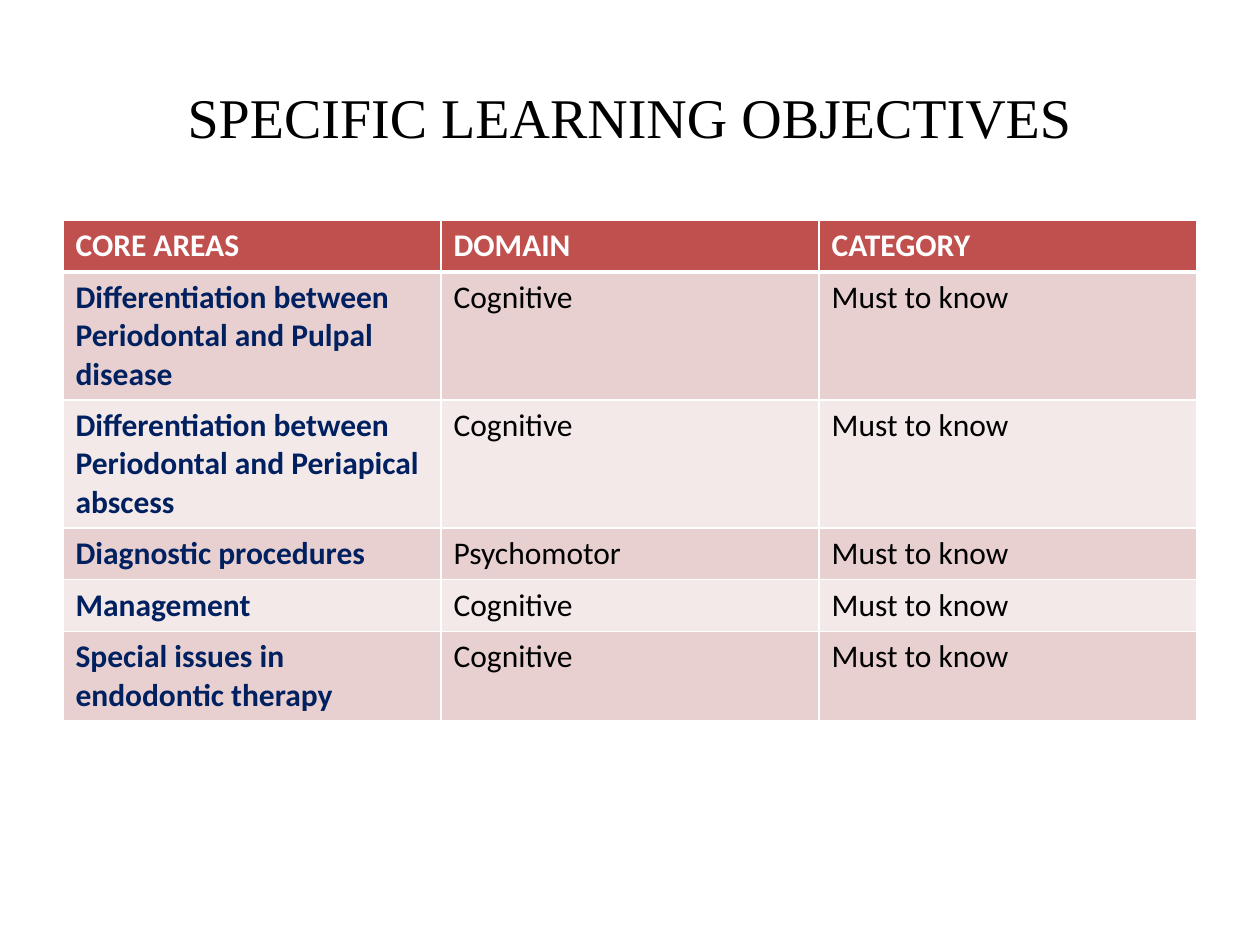
import pptx
import pptx.dml.color
import pptx.enum.text
import pptx.oxml
import pptx.oxml.ns
import pptx.util
from pptx.util import Inches

ROWS = [
    ("CORE AREAS", "DOMAIN", "CATEGORY"),
    ("Differentiation between Periodontal and Pulpal disease", "Cognitive", "Must to know"),
    ("Differentiation between Periodontal and Periapical abscess", "Cognitive", "Must to know"),
    ("Diagnostic procedures", "Psychomotor", "Must to know"),
    ("Management", "Cognitive", "Must to know"),
    ("Special issues in endodontic therapy", "Cognitive", "Must to know"),
]


def write(frame, text, font="Calibri", size=18, color="000000", bold=False, align=None):
    para = frame.paragraphs[0]
    para.alignment = align
    span = para.add_run()
    span.text = text
    span.font.name = font
    span.font.size = pptx.util.Pt(size)
    span.font.bold = bold
    span.font.color.rgb = pptx.dml.color.RGBColor.from_string(color)


def paint_cell(cell, fill, bottom):
    """Give the cell white borders, the bottom one in its own width, and a fill."""
    properties = cell._tc.get_or_add_tcPr()
    for side, width in (("L", 1), ("R", 1), ("T", 1), ("B", bottom)):
        properties.append(pptx.oxml.parse_xml(
            f'<a:ln{side} {pptx.oxml.ns.nsdecls("a")} w="{pptx.util.Pt(width)}">'
            f'<a:solidFill><a:srgbClr val="FFFFFF"/></a:solidFill></a:ln{side}>'))
    cell.fill.solid()
    cell.fill.fore_color.rgb = pptx.dml.color.RGBColor.from_string(fill)


deck = pptx.Presentation()
deck.slide_width, deck.slide_height = Inches(10), Inches(7.5)
page = deck.slides.add_slide(deck.slide_layouts[5])

title = page.shapes.title
title.left, title.top, title.width, title.height = Inches(0.5), Inches(0.3), Inches(9), Inches(1.25)
title.text_frame.vertical_anchor = pptx.enum.text.MSO_ANCHOR.MIDDLE
write(title.text_frame, "SPECIFIC LEARNING OBJECTIVES", font="Times New Roman", size=32,
      align=pptx.enum.text.PP_ALIGN.CENTER)

objectives = page.shapes.add_table(len(ROWS), 3, Inches(0.5), Inches(1.75),
                                   Inches(9), Inches(0.41 * len(ROWS))).table
for r, texts in enumerate(ROWS):
    header = r == 0
    fill = "C0504D" if header else ("F4E9E9", "E8D0D0")[r % 2]
    for c, text in enumerate(texts):
        cell = objectives.cell(r, c)
        color = "FFFFFF" if header else "002060" if c == 0 else "000000"
        write(cell.text_frame, text, color=color, bold=header or c == 0)
        # The heavy rule under the header is shared with the row below.
        paint_cell(cell, fill, bottom=3 if header else 1)
        if r == 1:
            cell._tc.tcPr.find(pptx.oxml.ns.qn("a:lnT")).set("w", str(pptx.util.Pt(3)))

deck.save("out.pptx")
